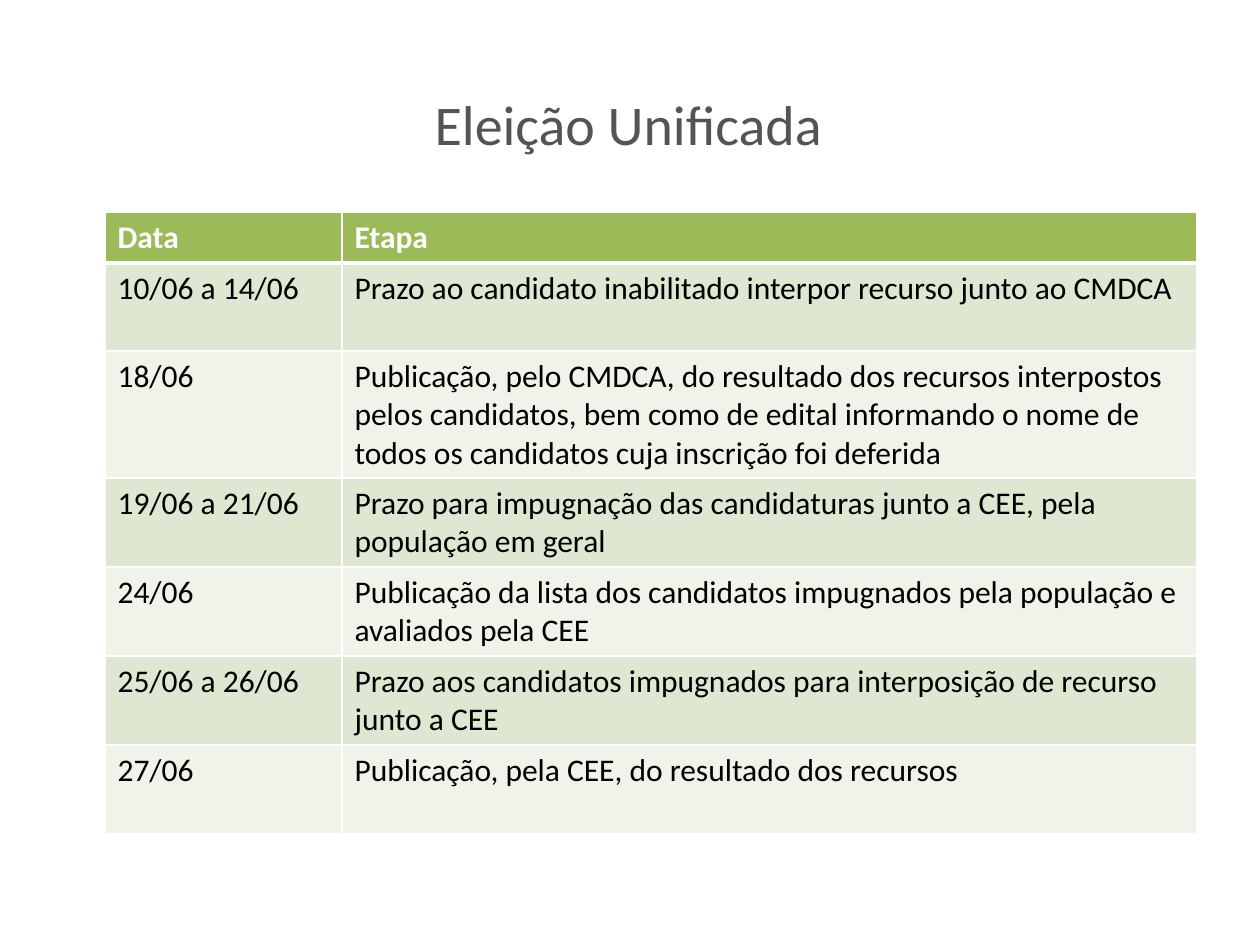
"""Build the slide with the timetable of the unified election."""
from dataclasses import dataclass

from lxml import etree
from pptx import Presentation
from pptx.dml.color import RGBColor
from pptx.enum.text import MSO_ANCHOR, PP_ALIGN
from pptx.oxml.ns import qn
from pptx.slide import Slide
from pptx.table import _Cell
from pptx.text.text import _Paragraph
from pptx.util import Emu, Pt

CENTER = PP_ALIGN.CENTER
LEFT = PP_ALIGN.LEFT
MIDDLE = MSO_ANCHOR.MIDDLE
EMU_PER_PX = 914400 / 126


@dataclass(frozen=True)
class Theme:
    font: str = "Calibri"
    title_size: int = 32
    table_size: int = 18
    title: str = "545454"
    heading: str = "FFFFFF"
    body: str = "000000"
    heading_fill: str = "9BBB59"
    band_fills: tuple[str, str] = ("DEE7D1", "EFF3EA")
    border: str = "FFFFFF"
    thin: int = 1
    thick: int = 3


@dataclass(frozen=True)
class Box:
    left: int
    top: int
    width: int
    height: int

    def emu(self) -> tuple[Emu, Emu, Emu, Emu]:
        return px(self.left), px(self.top), px(self.width), px(self.height)


@dataclass(frozen=True)
class Step:
    date: str
    stage: str
    height: int = 89


THEME = Theme()
TITLE_BOX = Box(105, 67, 1047, 113)
TABLE_BOX = Box(105, 212, 1092, 622)
COLUMN_WIDTHS = (237, 855)
STEPS = (
    Step("Data", "Etapa", 51),
    Step("10/06 a 14/06", "Prazo ao candidato inabilitado interpor recurso junto ao CMDCA", 88),
    Step("18/06", "Publicação, pelo CMDCA, do resultado dos recursos interpostos pelos "
         "candidatos, bem como de edital informando o nome de todos os candidatos cuja "
         "inscrição foi deferida", 127),
    Step("19/06 a 21/06", "Prazo para impugnação das candidaturas junto a CEE, pela população em geral"),
    Step("24/06", "Publicação da lista dos candidatos impugnados pela população e avaliados pela CEE"),
    Step("25/06 a 26/06", "Prazo aos candidatos impugnados para interposição de recurso junto a CEE"),
    Step("27/06", "Publicação, pela CEE, do resultado dos recursos"),
)


def px(length: int) -> Emu:
    return Emu(round(length * EMU_PER_PX))


def add_run(paragraph: _Paragraph, wording: str, size: int, color: str, bold: bool = False) -> None:
    run = paragraph.add_run()
    run.text = wording
    run.font.name = THEME.font
    run.font.size = Pt(size)
    run.font.bold = bold
    run.font.color.rgb = RGBColor.from_string(color)


def add_title(slide: Slide, wording: str) -> None:
    frame = slide.shapes.add_textbox(*TITLE_BOX.emu()).text_frame
    frame.word_wrap = True
    frame.vertical_anchor = MIDDLE
    heading = frame.paragraphs[0]
    heading.alignment = CENTER
    add_run(heading, wording, THEME.title_size, THEME.title)


def set_borders(cell: _Cell, top: int, bottom: int) -> None:
    properties = cell._tc.get_or_add_tcPr()
    widths = {"a:lnL": THEME.thin, "a:lnR": THEME.thin, "a:lnT": top, "a:lnB": bottom}
    for side, width in widths.items():
        line = etree.SubElement(properties, qn(side), w=str(Pt(width)))
        fill = etree.SubElement(line, qn("a:solidFill"))
        etree.SubElement(fill, qn("a:srgbClr"), val=THEME.border)


def fill_cell(cell: _Cell, wording: str, row: int) -> None:
    is_heading = row == 0
    set_borders(
        cell,
        top=THEME.thick if row == 1 else THEME.thin,
        bottom=THEME.thick if is_heading else THEME.thin,
    )
    cell.fill.solid()
    background = THEME.heading_fill if is_heading else THEME.band_fills[(row - 1) % 2]
    cell.fill.fore_color.rgb = RGBColor.from_string(background)
    entry = cell.text_frame.paragraphs[0]
    entry.alignment = LEFT
    color = THEME.heading if is_heading else THEME.body
    add_run(entry, wording, THEME.table_size, color, is_heading)


def add_timetable(slide: Slide, steps: tuple[Step, ...]) -> None:
    timetable = slide.shapes.add_table(len(steps), len(COLUMN_WIDTHS), *TABLE_BOX.emu()).table
    for column, width in zip(timetable.columns, COLUMN_WIDTHS):
        column.width = px(width)
    for row, step in enumerate(steps):
        timetable.rows[row].height = px(step.height)
        for column, wording in enumerate((step.date, step.stage)):
            fill_cell(timetable.cell(row, column), wording, row)


def main() -> None:
    deck = Presentation()
    deck.slide_width = px(1260)
    deck.slide_height = px(945)
    slide = deck.slides.add_slide(deck.slide_layouts[6])
    add_title(slide, "Eleição Unificada")
    add_timetable(slide, STEPS)
    deck.save("out.pptx")


if __name__ == "__main__":
    main()
